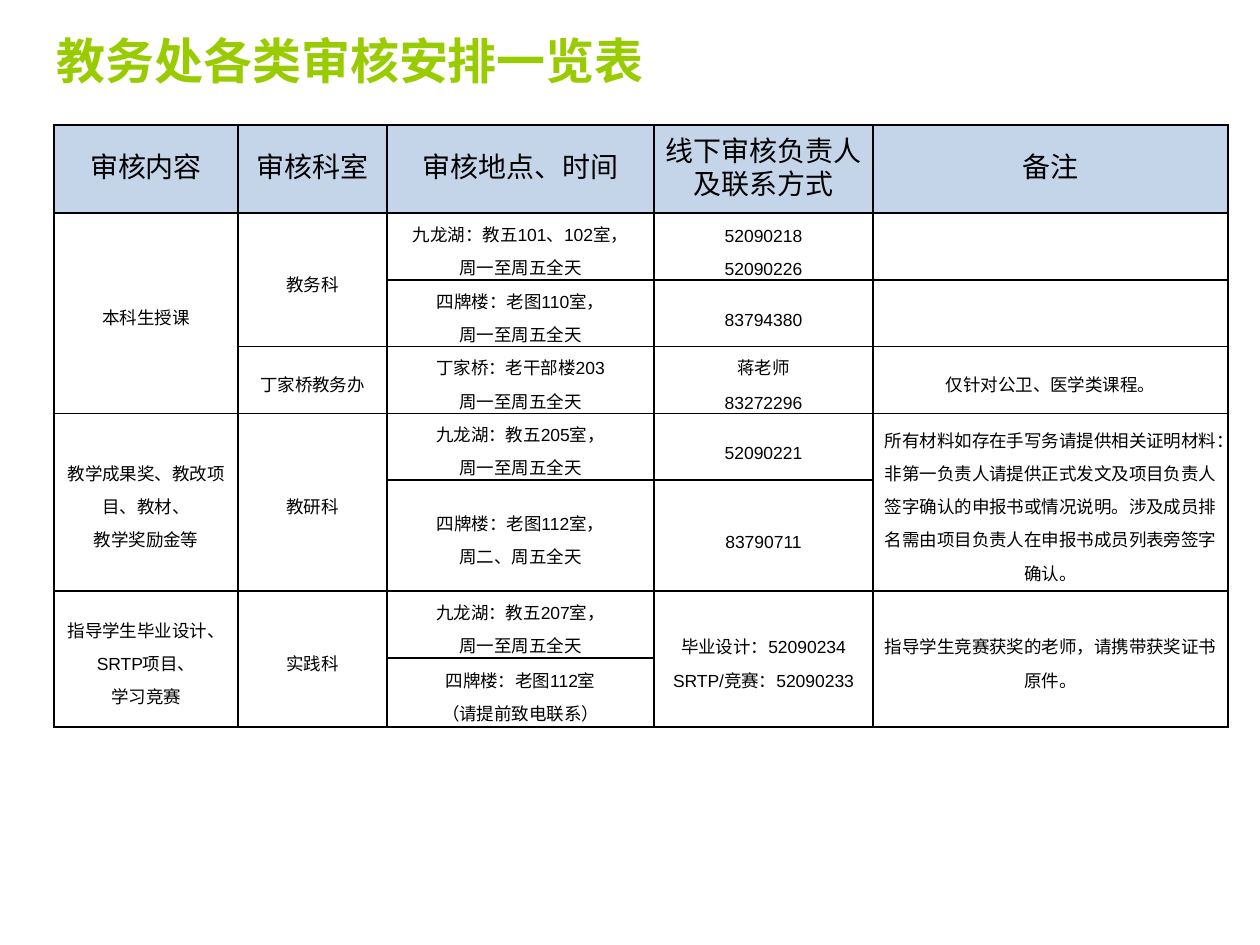
from lxml import etree
from pptx import Presentation
from pptx import util as u
from pptx.dml.color import RGBColor
from pptx.enum import text
from pptx.oxml import ns

SCALE = 914400 / 126
HUES = {"title": "99CC00", "head": "4F81BD", "ink": "000000"}


def px(n):
    return u.Emu(round(n * SCALE))


def write(par, words, size, font, hue, bold=False):
    run = par.add_run()
    run.text = words
    run.font.size = u.Pt(size)
    run.font.name = font
    run.font.bold = bold
    run.font.color.rgb = RGBColor.from_string(HUES[hue])


deck = Presentation()
deck.slide_width, deck.slide_height = px(1260), px(945)
slide = deck.slides.add_slide(deck.slide_layouts[5])

title = slide.shapes.title
title.left, title.top, title.width, title.height = px(44), px(26), px(1134), px(68)
frame = title.text_frame
frame.auto_size = text.MSO_AUTO_SIZE.NONE
frame.vertical_anchor = text.MSO_ANCHOR.MIDDLE
frame.paragraphs[0].alignment = text.PP_ALIGN.LEFT
write(frame.paragraphs[0], "教务处各类审核安排一览表", 28, "Noto Sans CJK SC", "title", True)

cols = [184, 149, 267, 219, 355]
rows = [88, 67, 66, 67, 66, 111, 67, 69]
week = "周一至周五全天"
cells = [
    ["审核内容", "审核科室", "审核地点、时间", "线下审核负责人\n及联系方式", "备注"],
    ["本科生授课", "教务科", f"九龙湖：教五101、102室，\n{week}", "52090218\n52090226", ""],
    ["", "", f"四牌楼：老图110室，\n{week}", "83794380", ""],
    ["", "丁家桥教务办", f"丁家桥：老干部楼203\n{week}", "蒋老师\n83272296",
     "仅针对公卫、医学类课程。"],
    ["教学成果奖、教改项目、教材、\n教学奖励金等", "教研科", f"九龙湖：教五205室，\n{week}",
     "52090221",
     "所有材料如存在手写务请提供相关证明材料：非第一负责人请提供正式发文及项目负责人"
     "签字确认的申报书或情况说明。涉及成员排名需由项目负责人在申报书成员列表旁签字确认。"],
    ["", "", "四牌楼：老图112室，\n周二、周五全天", "83790711", ""],
    ["指导学生毕业设计、SRTP项目、\n学习竞赛", "实践科", f"九龙湖：教五207室，\n{week}",
     "毕业设计：52090234\nSRTP/竞赛：52090233",
     "指导学生竞赛获奖的老师，请携带获奖证书原件。"],
    ["", "", "四牌楼：老图112室\n（请提前致电联系）", "", ""],
]
spans = [(1, 0, 3), (1, 1, 2), (4, 0, 2), (4, 1, 2), (4, 4, 2),
         (6, 0, 2), (6, 1, 2), (6, 3, 2), (6, 4, 2)]

grid = slide.shapes.add_table(len(rows), len(cols), px(54), px(125),
                              px(sum(cols)), px(sum(rows))).table
grid.first_row = grid.horz_banding = False
for col, wide in zip(grid.columns, cols):
    col.width = px(wide)
for row, high in zip(grid.rows, rows):
    row.height = px(high)

for r, line in enumerate(cells):
    for c, words in enumerate(line):
        cell = grid.cell(r, c)
        cell.margin_left = cell.margin_right = px(9)
        cell.margin_top = cell.margin_bottom = 0
        cell.vertical_anchor = text.MSO_ANCHOR.MIDDLE
        props = cell._tc.get_or_add_tcPr()
        for side in ("lnL", "lnR", "lnT", "lnB"):
            edge = etree.SubElement(props, ns.qn(f"a:{side}"), w=str(u.Pt(1)))
            fill = etree.SubElement(edge, ns.qn("a:solidFill"))
            etree.SubElement(fill, ns.qn("a:srgbClr"), val=HUES["ink"])
        if r == 0:
            cell.fill.solid()
            cell.fill.fore_color.rgb = RGBColor.from_string(HUES["head"])
            tint = props.find(ns.qn("a:solidFill")).find(ns.qn("a:srgbClr"))
            etree.SubElement(tint, ns.qn("a:alpha"), val="33000")
        else:
            cell.fill.background()
        if not words:
            continue
        for i, part in enumerate(words.split("\n")):
            body = cell.text_frame
            par = body.add_paragraph() if i else body.paragraphs[0]
            par.alignment = text.PP_ALIGN.CENTER
            par.line_spacing = u.Pt(19)
            write(par, part, 10 if r else 16, "Arial", "ink")

for r, c, count in spans:
    grid.cell(r, c).merge(grid.cell(r + count - 1, c))

deck.save("out.pptx")
